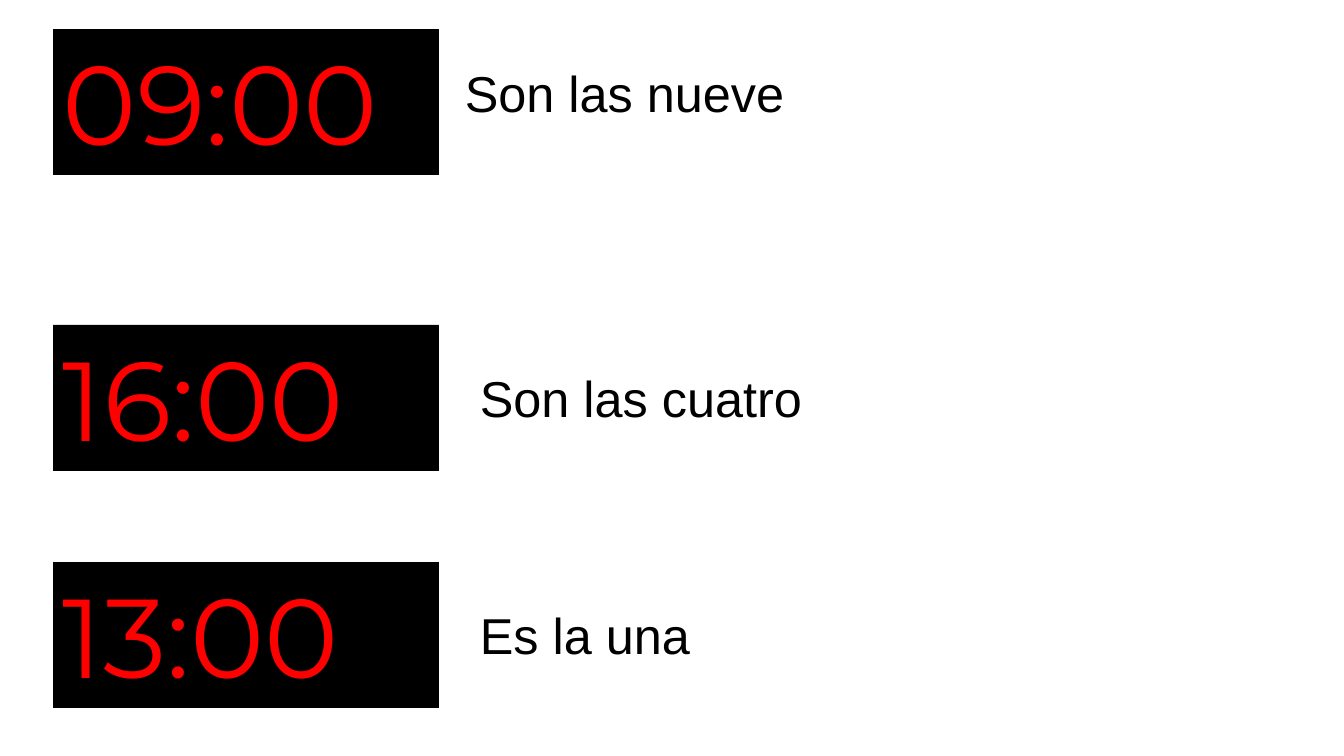
import pptx
import pptx.dml.color
import pptx.enum.shapes
import pptx.enum.text
import pptx.util

EMU_PER_PX = 914400 / 100.8
CLOCK_LEFT, CLOCK_WIDTH, CLOCK_HEIGHT = 53, 386, 146
PHRASE_WIDTH, PHRASE_HEIGHT = 560, 72

# Clock top, time, phrase, phrase offset from the clock's corner
TIMES = [
    (29, "09:00", "Son las nueve", (402, 28)),
    (325, "16:00", "Son las cuatro", (417, 37)),
    (562, "13:00", "Es la una", (417, 37)),
]


def px(length):
    return pptx.util.Emu(round(length * EMU_PER_PX))


def color(hex_code):
    return pptx.dml.color.RGBColor.from_string(hex_code)


def write(shape, text, *, font, size, ink):
    frame = shape.text_frame
    frame.word_wrap = True
    frame.vertical_anchor = pptx.enum.text.MSO_ANCHOR.TOP
    frame.auto_size = pptx.enum.text.MSO_AUTO_SIZE.SHAPE_TO_FIT_TEXT
    line = frame.paragraphs[0]
    line.alignment = pptx.enum.text.PP_ALIGN.LEFT
    run = line.add_run()
    run.text = text
    run.font.name = font
    run.font.size = pptx.util.Pt(size)
    run.font.color.rgb = color(ink)


def add_time_row(slide, left, top, time, phrase, phrase_offset):
    # Digital clock
    clock = slide.shapes.add_shape(
        pptx.enum.shapes.MSO_SHAPE.RECTANGLE,
        px(left), px(top), px(CLOCK_WIDTH), px(CLOCK_HEIGHT))
    clock.shadow.inherit = False
    clock.fill.solid()
    clock.fill.fore_color.rgb = color("000000")
    clock.line.fill.background()
    write(clock, time, font="Montserrat", size=80, ink="FF0000")

    # Time in words
    dx, dy = phrase_offset
    words = slide.shapes.add_textbox(
        px(left + dx), px(top + dy), px(PHRASE_WIDTH), px(PHRASE_HEIGHT))
    write(words, phrase, font="Arial", size=36, ink="000000")


def main():
    deck = pptx.Presentation()
    deck.slide_width, deck.slide_height = px(1344), px(756)
    slide = deck.slides.add_slide(deck.slide_layouts[6])
    for top, time, phrase, phrase_offset in TIMES:
        add_time_row(slide, CLOCK_LEFT, top, time, phrase, phrase_offset)
    deck.save("out.pptx")


if __name__ == "__main__":
    main()
